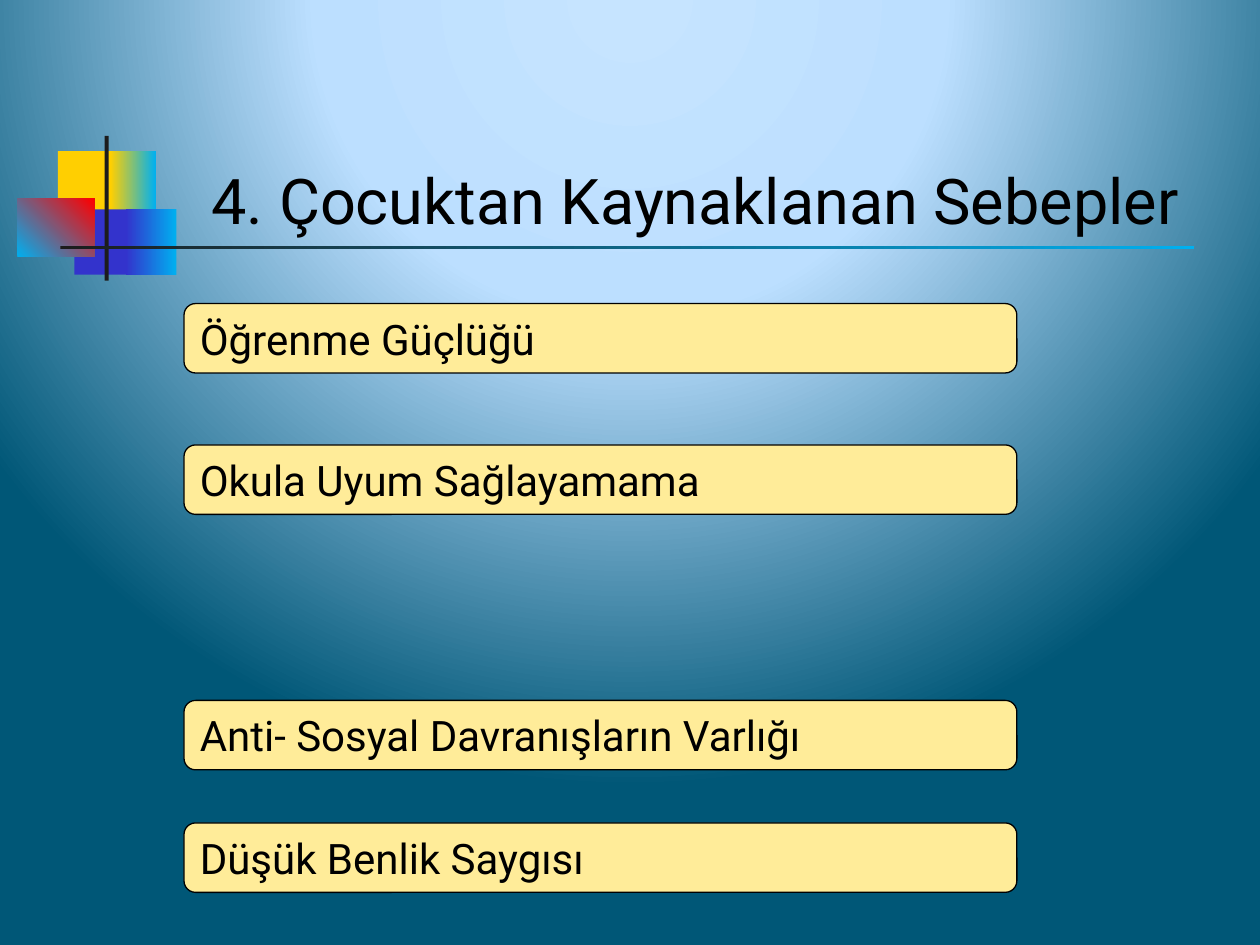
from pptx import Presentation
from pptx.dml.color import RGBColor
from pptx.enum.shapes import MSO_SHAPE
from pptx.enum.text import MSO_ANCHOR, PP_ALIGN
from pptx.oxml import parse_xml
from pptx.oxml.ns import nsdecls, qn
from pptx.util import Cm, Pt

BLACK = RGBColor(0x00, 0x00, 0x00)
INK = RGBColor(0x1C, 0x1C, 0x1C)
GOLD = RGBColor(0xFF, 0xCF, 0x01)
BLUE = RGBColor(0x33, 0x33, 0xCC)
SKY = RGBColor(0x00, 0xB0, 0xF0)
RED = RGBColor(0xFF, 0x00, 0x00)
CREAM = RGBColor(0xFF, 0xEC, 0x99)
PALE = RGBColor(0xC6, 0xE4, 0xFF)
LIGHT = RGBColor(0xBC, 0xDF, 0xFF)
TEAL = RGBColor(0x00, 0x57, 0x77)

# Content
TITLE = "4. Çocuktan Kaynaklanan Sebepler"
CAUSES = [  # text, top in cm
    ("Öğrenme Güçlüğü", 6.12),
    ("Okula Uyum Sağlayamama", 8.97),
    ("Anti- Sosyal Davranışların Varlığı", 14.12),
    ("Düşük Benlik Saygısı", 16.59),
]
GLOW = [(0, PALE), (40, LIGHT), (100, TEAL)]
DECOR = [  # left, top, width, height in cm; colours; angle
    (1.17, 3.05, 1.22, 1.32, [GOLD], 0),
    (2.23, 3.05, 0.91, 1.32, [GOLD, SKY], 0),
    (1.5, 4.22, 1.17, 1.32, [BLUE], 0),
    (2.54, 4.22, 1.02, 1.32, [BLUE, SKY], 0),
    (0.35, 4.01, 1.55, 1.17, [SKY, RED], 45),
    (2.11, 2.74, 0.08, 2.92, [INK], 0),
    (1.22, 4.95, 22.86, 0.08, [INK, SKY], 0),
]


def paint(fill, tones, angle=0):
    if len(tones) == 1:
        fill.solid()
        fill.fore_color.rgb = tones[0]
        return
    fill.gradient()
    fill.gradient_angle = angle
    for stop, tone in zip(fill.gradient_stops, tones):
        stop.color.rgb = tone


def block(slide, kind, box, tones, angle=0, line=None):
    shape = slide.shapes.add_shape(kind, *map(Cm, box))
    shape.shadow.inherit = False
    paint(shape.fill, tones, angle)
    if line is None:
        shape.line.fill.background()
    else:
        shape.line.color.rgb = line
        shape.line.width = Pt(0.75)
    return shape


def write(shape, text, size=24, align=PP_ALIGN.LEFT,
          anchor=MSO_ANCHOR.MIDDLE, wrap=False):
    frame = shape.text_frame
    frame.word_wrap = wrap
    frame.vertical_anchor = anchor
    para = frame.paragraphs[0]
    para.alignment = align
    run = para.add_run()
    run.text = text
    run.font.name = "Roboto"
    run.font.size = Pt(size)
    run.font.color.rgb = BLACK


def glow(slide):
    slide.background.fill.gradient()
    old = slide.element.find(".//" + qn("a:gradFill"))
    stops = "".join(
        f'<a:gs pos="{pos * 1000}"><a:srgbClr val="{tone}"/></a:gs>'
        for pos, tone in GLOW)
    new = parse_xml(
        f'<a:gradFill {nsdecls("a")} rotWithShape="0"><a:gsLst>{stops}</a:gsLst>'
        '<a:path path="circle"><a:fillToRect l="50000" t="-80000" '
        'r="50000" b="180000"/></a:path></a:gradFill>')
    old.getparent().replace(old, new)


def main():
    deck = Presentation()
    deck.slide_width, deck.slide_height = Cm(25.4), Cm(19.05)
    slide = deck.slides.add_slide(deck.slide_layouts[6])
    glow(slide)

    # Coloured squares and rules
    for *box, tones, angle in DECOR:
        block(slide, MSO_SHAPE.RECTANGLE, box, tones, angle)

    # Title
    head = slide.shapes.add_textbox(Cm(3.2), Cm(1.73), Cm(21.64), Cm(3.18))
    write(head, TITLE, size=36, align=PP_ALIGN.CENTER,
          anchor=MSO_ANCHOR.BOTTOM, wrap=True)

    # Causes
    for text, top in CAUSES:
        box = (3.71, top, 16.79, 1.4)
        bar = block(slide, MSO_SHAPE.ROUNDED_RECTANGLE, box, [CREAM], line=BLACK)
        write(bar, text)

    deck.save("out.pptx")


if __name__ == "__main__":
    main()
